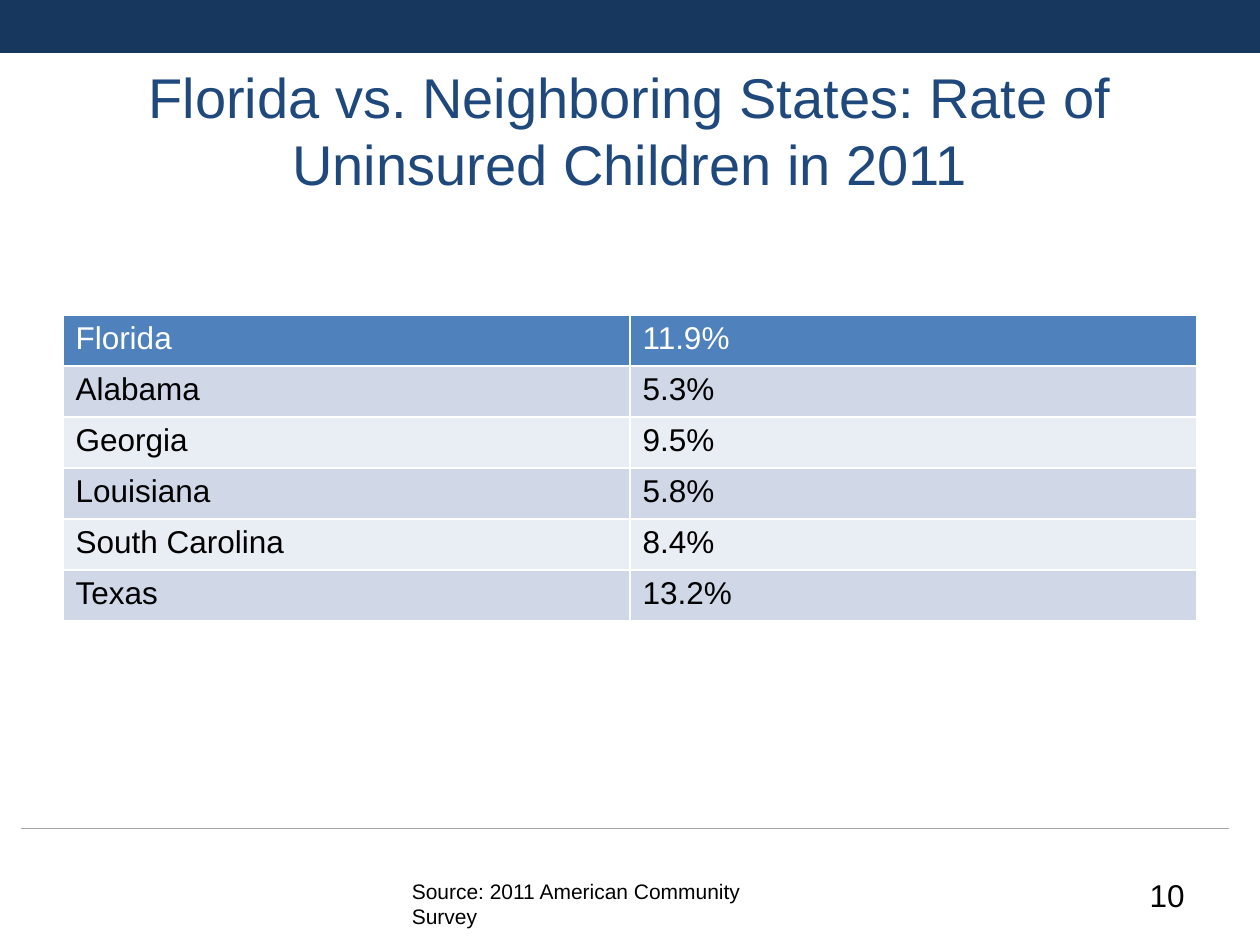
from lxml.etree import SubElement
from pptx import Presentation
from pptx.dml.color import RGBColor
from pptx.enum.shapes import MSO_CONNECTOR, MSO_SHAPE
from pptx.enum.text import MSO_ANCHOR, PP_ALIGN
from pptx.oxml.ns import qn
from pptx.util import Inches, Pt

THEME = {
    "face": "Arial",
    "bar": "17375E", "rule": "A6A6A6", "title": "1F497D",
    "head": "4F81BD", "bands": ("D0D8E8", "E9EDF4"),
    "light": "FFFFFF", "dark": "000000",
    "big": 32, "body": 18, "small": 12,
}
RATES = [
    ("Florida", "11.9%"),
    ("Alabama", "5.3%"),
    ("Georgia", "9.5%"),
    ("Louisiana", "5.8%"),
    ("South Carolina", "8.4%"),
    ("Texas", "13.2%"),
]

deck = Presentation()
deck.slide_width, deck.slide_height = Inches(10), Inches(7.5)
slide = deck.slides.add_slide(deck.slide_layouts[5])
shapes = slide.shapes


def area(left, top, width, height):
    wide, high = deck.slide_width, deck.slide_height
    return [int(n) for n in (left * wide, top * high, width * wide, height * high)]


def write(frame, text, size, color, align=PP_ALIGN.LEFT):
    frame.word_wrap = True
    para = frame.paragraphs[0]
    para.alignment = align
    run = para.add_run()
    run.text = text
    style = {"name": THEME["face"], "size": Pt(THEME[size]), "bold": False}
    for key, value in style.items():
        setattr(run.font, key, value)
    run.font.color.rgb = RGBColor.from_string(THEME[color])


bar = shapes.add_shape(MSO_SHAPE.RECTANGLE, *area(0, 0, 1, 0.056))
bar.shadow.inherit = False
bar.fill.solid()
bar.fill.fore_color.rgb = RGBColor.from_string(THEME["bar"])
bar.line.fill.background()

left, top, width, _ = area(0.017, 0.877, 0.958, 0)
rule = shapes.add_connector(MSO_CONNECTOR.STRAIGHT, left, top, left + width, top)
rule.line.color.rgb = RGBColor.from_string(THEME["rule"])
rule.line.width = Pt(0.75)
SubElement(rule._element.spPr, qn("a:effectLst"))

title = shapes.title
place = zip(("left", "top", "width", "height"), area(0.05, 0.067, 0.9, 0.14))
for key, value in place:
    setattr(title, key, value)
title.text_frame.vertical_anchor = MSO_ANCHOR.MIDDLE
write(title.text_frame, "Florida vs. Neighboring States: Rate of Uninsured Children in 2011",
      "big", "title", PP_ALIGN.CENTER)

grid = shapes.add_table(len(RATES), 2, *area(0.05, 1 / 3, 0.9, 0.324)).table
for r, rate in enumerate(RATES):
    fill = THEME["bands"][(r - 1) % 2] if r else THEME["head"]
    for c, text in enumerate(rate):
        cell = grid.cell(r, c)
        cell.fill.solid()
        cell.fill.fore_color.rgb = RGBColor.from_string(fill)
        write(cell.text_frame, text, "body", "dark" if r else "light")

NOTES = [
    ((0.717, 0.92, 0.233, 0.053), "10", "body", PP_ALIGN.RIGHT),
    ((0.317, 0.923, 0.334, 0.04), "Source: 2011 American Community Survey",
     "small", PP_ALIGN.LEFT),
]
for spot, text, size, align in NOTES:
    box = shapes.add_textbox(*area(*spot))
    write(box.text_frame, text, size, "dark", align)

deck.save("out.pptx")
